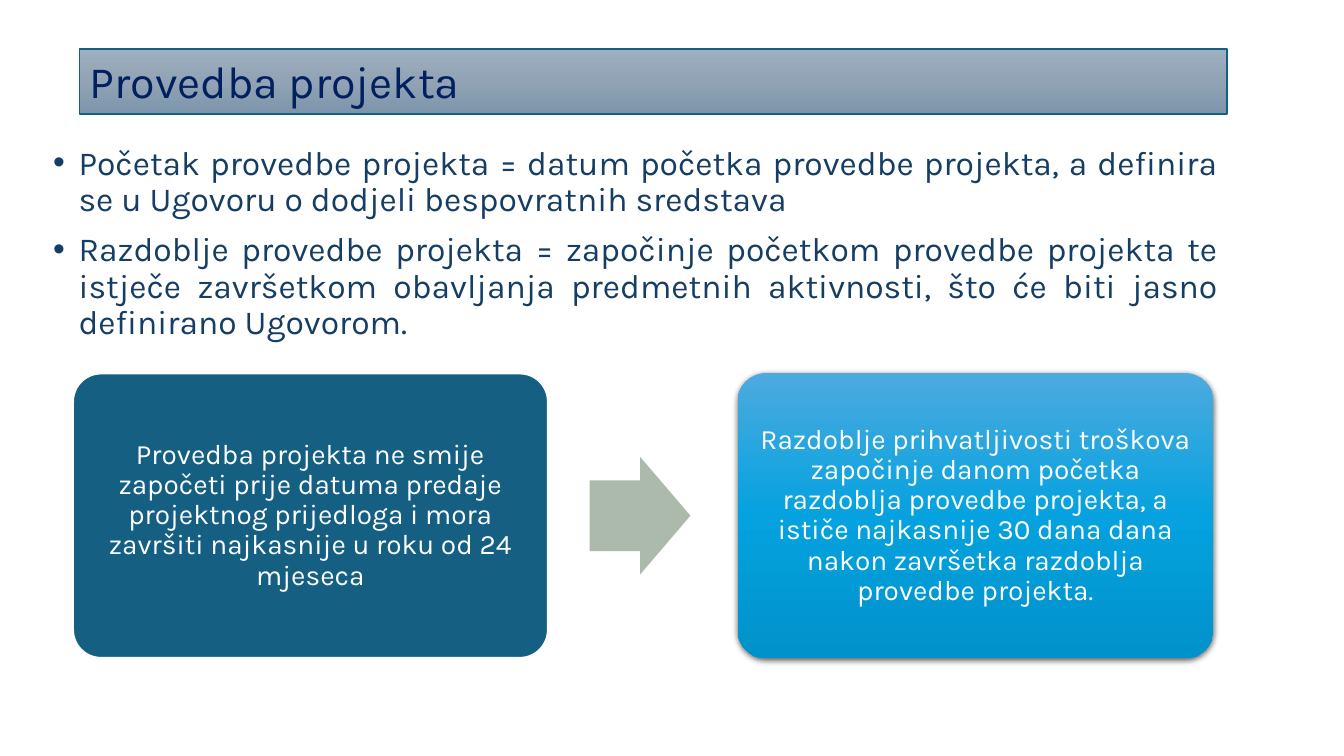
from lxml import etree
from pptx import Presentation
from pptx.dml.color import RGBColor
from pptx.enum.shapes import MSO_SHAPE
from pptx.enum.text import MSO_ANCHOR, MSO_AUTO_SIZE, PP_ALIGN
from pptx.oxml.ns import qn
from pptx.util import Cm, Pt

TITLE = "Provedba projekta"
BULLETS = [
    "Početak provedbe projekta = datum početka provedbe projekta, a definira "
    "se u Ugovoru o dodjeli bespovratnih sredstava",
    "Razdoblje provedbe projekta = započinje početkom provedbe projekta te "
    "istječe završetkom obavljanja predmetnih aktivnosti, što će biti jasno "
    "definirano Ugovorom.",
]
CARDS = [
    "Provedba projekta ne smije započeti prije datuma predaje projektnog "
    "prijedloga i mora završiti najkasnije u roku od 24 mjeseca",
    "Razdoblje prihvatljivosti troškova započinje danom početka razdoblja "
    "provedbe projekta, a ističe najkasnije 30 dana dana nakon završetka "
    "razdoblja provedbe projekta.",
]

FONT = "Karla"
WHITE = RGBColor(0xFF, 0xFF, 0xFF)
TEAL = RGBColor(0x15, 0x60, 0x82)
SAGE = RGBColor(0xAC, 0xBA, 0xAC)
NAVY = RGBColor(0x00, 0x20, 0x60)
DARK_BLUE = RGBColor(0x16, 0x3E, 0x64)
BLACK = RGBColor(0x00, 0x00, 0x00)
STEEL_FADE = [RGBColor(0x9E, 0xAF, 0xBF), RGBColor(0x91, 0xA3, 0xB4), RGBColor(0x7C, 0x95, 0xAB)]
SKY_FADE = [RGBColor(0x4C, 0xAA, 0xDF), RGBColor(0x05, 0xA2, 0xDF), RGBColor(0x00, 0x92, 0xCB)]

RECT, ROUND_RECT, ARROW = MSO_SHAPE.RECTANGLE, MSO_SHAPE.ROUNDED_RECTANGLE, MSO_SHAPE.RIGHT_ARROW
LEFT, CENTER, JUSTIFY = PP_ALIGN.LEFT, PP_ALIGN.CENTER, PP_ALIGN.JUSTIFY
TOP, MIDDLE = MSO_ANCHOR.TOP, MSO_ANCHOR.MIDDLE
GROW = MSO_AUTO_SIZE.SHAPE_TO_FIT_TEXT

# Lengths in cm
CARD_LEFT, CARD_TOP, CARD_W, CARD_H = 1.83, 9.4, 11.99, 7.19
CARD_STEP = 16.76
ARROW_W, ARROW_H, ARROW_GAP = 2.54, 2.97, 1.04
BULLET_INDENT = Cm(0.64)


def add_sub(parent, tag, **attrs):
    return etree.SubElement(parent, qn(tag), {k: str(v) for k, v in attrs.items()})


def fade_down(sp, colors):
    """Fill with evenly spaced colours running from top to bottom."""
    sp.fill.gradient()
    grad = sp._element.spPr.find(qn("a:gradFill"))
    for child in list(grad):
        grad.remove(child)
    stops = add_sub(grad, "a:gsLst")
    for i, color in enumerate(colors):
        gs = add_sub(stops, "a:gs", pos=i * 100000 // (len(colors) - 1))
        add_sub(gs, "a:srgbClr", val=color)
    add_sub(grad, "a:lin", ang=90 * 60000, scaled=0)


def drop_shadow(sp):
    effects = sp._element.spPr.find(qn("a:effectLst"))
    shadow = add_sub(effects, "a:outerShdw", blurRad=Pt(4.5), dist=Pt(1.5),
                     dir=90 * 60000, algn="ctr", rotWithShape=0)
    add_sub(add_sub(shadow, "a:srgbClr", val=BLACK), "a:alpha", val=63000)


def add_box(shapes, kind, left, top, width, height, fill, line=None, line_width=1):
    sp = shapes.add_shape(kind, Cm(left), Cm(top), Cm(width), Cm(height))
    sp.shadow.inherit = False
    if isinstance(fill, list):
        fade_down(sp, fill)
    else:
        sp.fill.solid()
        sp.fill.fore_color.rgb = fill
    if line is None:
        sp.line.fill.background()
    else:
        sp.line.color.rgb = line
        sp.line.width = Pt(line_width)
    return sp


def write(sp, *texts, size, color, align=LEFT, anchor=TOP, spacing=1.0,
          before=0, bullet=False, margin=None, auto_size=None):
    tf = sp.text_frame
    tf.word_wrap = True
    tf.vertical_anchor = anchor
    if auto_size is not None:
        tf.auto_size = auto_size
    if margin is not None:
        tf.margin_left = tf.margin_right = tf.margin_top = tf.margin_bottom = margin
    for i, text in enumerate(texts):
        p = tf.add_paragraph() if i else tf.paragraphs[0]
        p.alignment = align
        p.line_spacing = spacing
        p.space_before = Pt(before if i else 0)
        if bullet:
            pPr = p._p.get_or_add_pPr()
            pPr.set("marL", str(BULLET_INDENT))
            pPr.set("indent", str(-BULLET_INDENT))
            add_sub(pPr, "a:buFont", typeface="Arial")
            add_sub(pPr, "a:buChar", char="•")
        r = p.add_run()
        r.text = text
        r.font.name = FONT
        r.font.size = Pt(size)
        r.font.color.rgb = color


def main():
    prs = Presentation()
    prs.slide_width, prs.slide_height = Cm(33.87), Cm(19.05)
    shapes = prs.slides.add_slide(prs.slide_layouts[6]).shapes

    first = add_box(shapes, ROUND_RECT, CARD_LEFT, CARD_TOP, CARD_W, CARD_H, TEAL, WHITE, 2)
    arrow = add_box(shapes, ARROW, CARD_LEFT + CARD_W + ARROW_GAP,
                    CARD_TOP + (CARD_H - ARROW_H) / 2, ARROW_W, ARROW_H, SAGE)
    arrow.adjustments[0], arrow.adjustments[1] = 0.6, 0.5
    second = add_box(shapes, ROUND_RECT, CARD_LEFT + CARD_STEP, CARD_TOP, CARD_W, CARD_H, SKY_FADE)
    drop_shadow(second)
    for card, text in zip((first, second), CARDS):
        card.adjustments[0] = 0.1
        write(card, text, size=20, color=WHITE, align=CENTER, anchor=MIDDLE,
              spacing=0.9, margin=Cm(0.2))

    title = add_box(shapes, RECT, 2.01, 1.24, 28.91, 1.63, STEEL_FADE, TEAL)
    write(title, TITLE, size=32, color=NAVY, auto_size=GROW)

    body = shapes.add_textbox(Cm(1.09), Cm(3.56), Cm(29.85), Cm(5.44))
    write(body, *BULLETS, size=24, color=DARK_BLUE, align=JUSTIFY, spacing=0.9,
          before=10, bullet=True, auto_size=GROW)

    prs.save("out.pptx")


if __name__ == "__main__":
    main()
